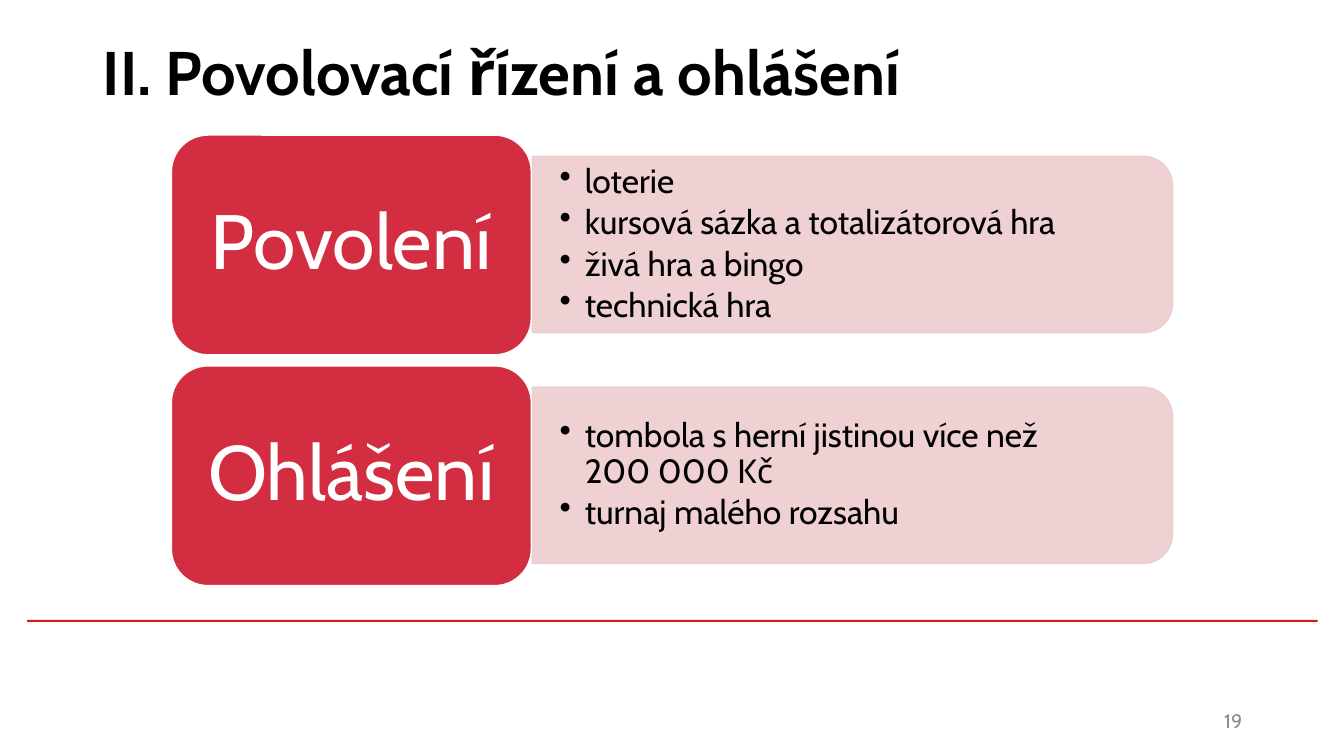
from lxml import etree
from pptx import Presentation
from pptx import util as u
from pptx.dml.color import RGBColor
from pptx.enum import shapes, text
from pptx.oxml.ns import qn

RED, PINK, WHITE, BLACK = "D22D40", "EECDCF", "FFFFFF", "000000"
RULE_RED, GREY = "CD1F21", "8C8C8C"
MIDDLE = text.MSO_ANCHOR.MIDDLE
ALIGN = text.PP_ALIGN


def color(hex_value):
    return RGBColor.from_string(hex_value)


def write(frame, paragraphs, size, hex_color=BLACK, bold=False, align=ALIGN.LEFT,
          margins=(0.1, 0.05), line_spacing=None, space_after=0, bullet=False):
    """Fill a text frame with equally formatted paragraphs."""
    frame.word_wrap = True
    frame.vertical_anchor = MIDDLE
    frame.margin_left = frame.margin_right = u.Inches(margins[0])
    frame.margin_top = frame.margin_bottom = u.Inches(margins[1])
    for index, content in enumerate(paragraphs):
        para = frame.paragraphs[0] if index == 0 else frame.add_paragraph()
        para.text = content
        if bullet:
            props = para._p.get_or_add_pPr()
            props.set("marL", str(u.Inches(0.25)))
            props.set("indent", str(u.Inches(-0.25)))
            etree.SubElement(props, qn("a:buChar")).set("char", "•")
        para.alignment = align
        para.space_after = u.Pt(space_after)
        if line_spacing:
            para.line_spacing = line_spacing
        for run in para.runs:
            run.font.name = "Cabin"
            run.font.size = u.Pt(size)
            run.font.bold = bold
            run.font.color.rgb = color(hex_color)


class SlideBuilder:
    def __init__(self, slide):
        self.slide = slide

    def box(self, left, top, width, height, paragraphs, size, **style):
        box = self.slide.shapes.add_textbox(*map(u.Inches, (left, top, width, height)))
        write(box.text_frame, paragraphs, size, **style)

    def shape(self, kind, left, top, width, height, fill, line=None, alpha=None):
        shape = self.slide.shapes.add_shape(kind, *map(u.Inches, (left, top, width, height)))
        shape.shadow.inherit = False
        shape.fill.solid()
        shape.fill.fore_color.rgb = color(fill)
        if line:
            shape.line.color.rgb = color(line)
            shape.line.width = u.Pt(1)
        else:
            shape.line.fill.background()
        if alpha:
            for tint in shape._element.spPr.iter(qn("a:srgbClr")):
                etree.SubElement(tint, qn("a:alpha")).set("val", str(alpha * 1000))
        return shape

    def category(self, top, name, items):
        """A red label with a pale panel of bullets to its right."""
        panel = self.shape(shapes.MSO_SHAPE.ROUND_2_SAME_RECTANGLE,
                           7.58, top - 2.09, 1.75, 6.35, PINK, line=PINK, alpha=90)
        panel.rotation = 90
        self.box(5.28, top + 0.3, 6.27, 1.57, items, 24, margins=(0.27, 0.14),
                 line_spacing=0.9, space_after=3.6, bullet=True)
        label = self.shape(shapes.MSO_SHAPE.ROUNDED_RECTANGLE,
                           1.7, top, 3.57, 2.18, RED, line=WHITE)
        write(label.text_frame, [name], 55, hex_color=WHITE, align=ALIGN.CENTER,
              margins=(0.23, 0.11), line_spacing=0.9)


def main():
    deck = Presentation()
    deck.slide_width, deck.slide_height = u.Inches(13.33), u.Inches(7.5)
    page = SlideBuilder(deck.slides.add_slide(deck.slide_layouts[6]))

    # Footer rule, title and page number
    page.shape(shapes.MSO_SHAPE.RECTANGLE, 0.27, 6.15, 12.8, 0.02, RULE_RED)
    page.box(0.92, 0.02, 11.5, 1.45, ["II. Povolovací řízení a ohlášení"], 44,
             bold=True, line_spacing=0.9)
    page.box(9.42, 6.95, 3, 0.4, ["19"], 14, hex_color=GREY, align=ALIGN.RIGHT)

    # Two categories of games
    categories = {
        "Povolení": ["loterie", "kursová sázka a totalizátorová hra",
                     "živá hra a bingo", "technická hra"],
        "Ohlášení": ["tombola s herní jistinou více než\v200 000 Kč",
                     "turnaj malého rozsahu"],
    }
    for row, (name, items) in enumerate(categories.items()):
        page.category(1.34 + row * 2.29, name, items)

    deck.save("out.pptx")


if __name__ == "__main__":
    main()
